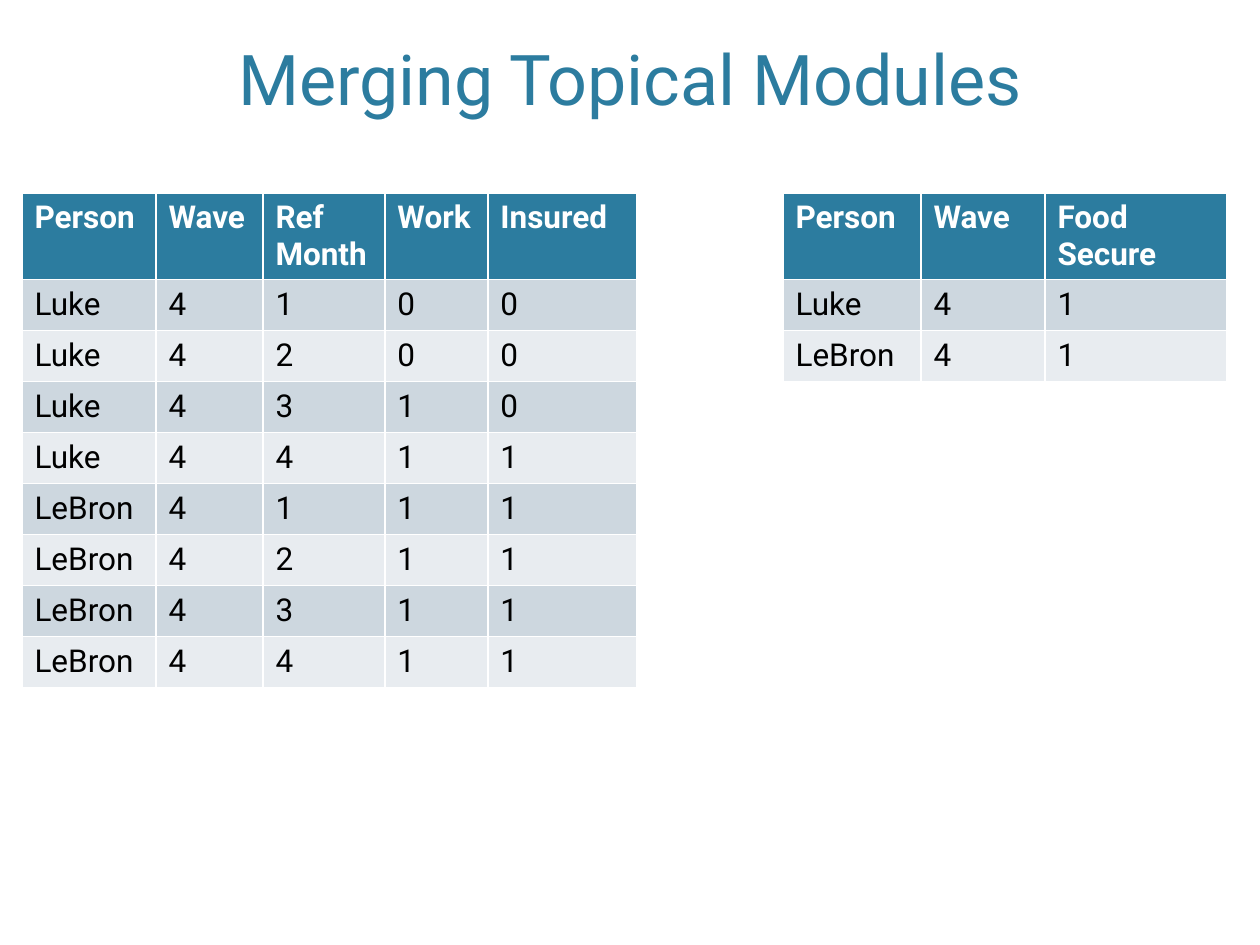
"""Build a slide that sets monthly person records beside a topical module."""
from pptx import Presentation
from pptx.dml.color import RGBColor
from pptx.enum.text import MSO_ANCHOR, PP_ALIGN
from pptx.util import Emu, Pt

BOTTOM = MSO_ANCHOR.BOTTOM
CENTER = PP_ALIGN.CENTER

FONT = "Roboto"
BLUE, WHITE, BLACK = "2C7C9F", "FFFFFF", "000000"
BANDS = ("CDD7DF", "E8ECF0")
PX_PER_INCH = 126
TABLE_TOP, HEADER_HEIGHT, ROW_HEIGHT = 193, 85, 51

TITLE = "Merging Topical Modules"
TABLES = [
    {
        "left": 22,
        "widths": (134, 107, 122, 103, 149),
        "rows": [
            ("Person", "Wave", "Ref Month", "Work", "Insured"),
            ("Luke", 4, 1, 0, 0),
            ("Luke", 4, 2, 0, 0),
            ("Luke", 4, 3, 1, 0),
            ("Luke", 4, 4, 1, 1),
            ("LeBron", 4, 1, 1, 1),
            ("LeBron", 4, 2, 1, 1),
            ("LeBron", 4, 3, 1, 1),
            ("LeBron", 4, 4, 1, 1),
        ],
    },
    {
        "left": 783,
        "widths": (138, 124, 182),
        "rows": [
            ("Person", "Wave", "Food Secure"),
            ("Luke", 4, 1),
            ("LeBron", 4, 1),
        ],
    },
]


def px(length):
    return Emu(round(length * 914400 / PX_PER_INCH))


def style_paragraph(paragraph, size, color, bold=False):
    font = paragraph.font
    font.name, font.size, font.bold = FONT, Pt(size), bold
    font.color.rgb = RGBColor.from_string(color)


def add_title(slide):
    title = slide.shapes.title
    title.left, title.top, title.width, title.height = map(px, (76, 15, 1108, 111))
    frame = title.text_frame
    frame.text = TITLE
    frame.vertical_anchor = BOTTOM
    paragraph = frame.paragraphs[0]
    paragraph.alignment = CENTER
    style_paragraph(paragraph, 40, BLUE)


def add_data_table(slide, left, widths, rows):
    heights = [HEADER_HEIGHT] + [ROW_HEIGHT] * (len(rows) - 1)
    table = slide.shapes.add_table(
        len(rows), len(widths), px(left), px(TABLE_TOP), px(sum(widths)), px(sum(heights))
    ).table
    for column, width in zip(table.columns, widths):
        column.width = px(width)
    for row_index, (values, height) in enumerate(zip(rows, heights)):
        table.rows[row_index].height = px(height)
        is_header = row_index == 0
        fill = BLUE if is_header else BANDS[(row_index - 1) % 2]
        for column_index, value in enumerate(values):
            cell = table.cell(row_index, column_index)
            cell.text = str(value)
            cell.fill.solid()
            cell.fill.fore_color.rgb = RGBColor.from_string(fill)
            style_paragraph(
                cell.text_frame.paragraphs[0], 18, WHITE if is_header else BLACK, is_header
            )


def main():
    presentation = Presentation()
    presentation.slide_width, presentation.slide_height = px(1260), px(945)
    slide = presentation.slides.add_slide(presentation.slide_layouts[5])
    add_title(slide)
    for table in TABLES:
        add_data_table(slide, **table)
    presentation.save("out.pptx")


if __name__ == "__main__":
    main()
